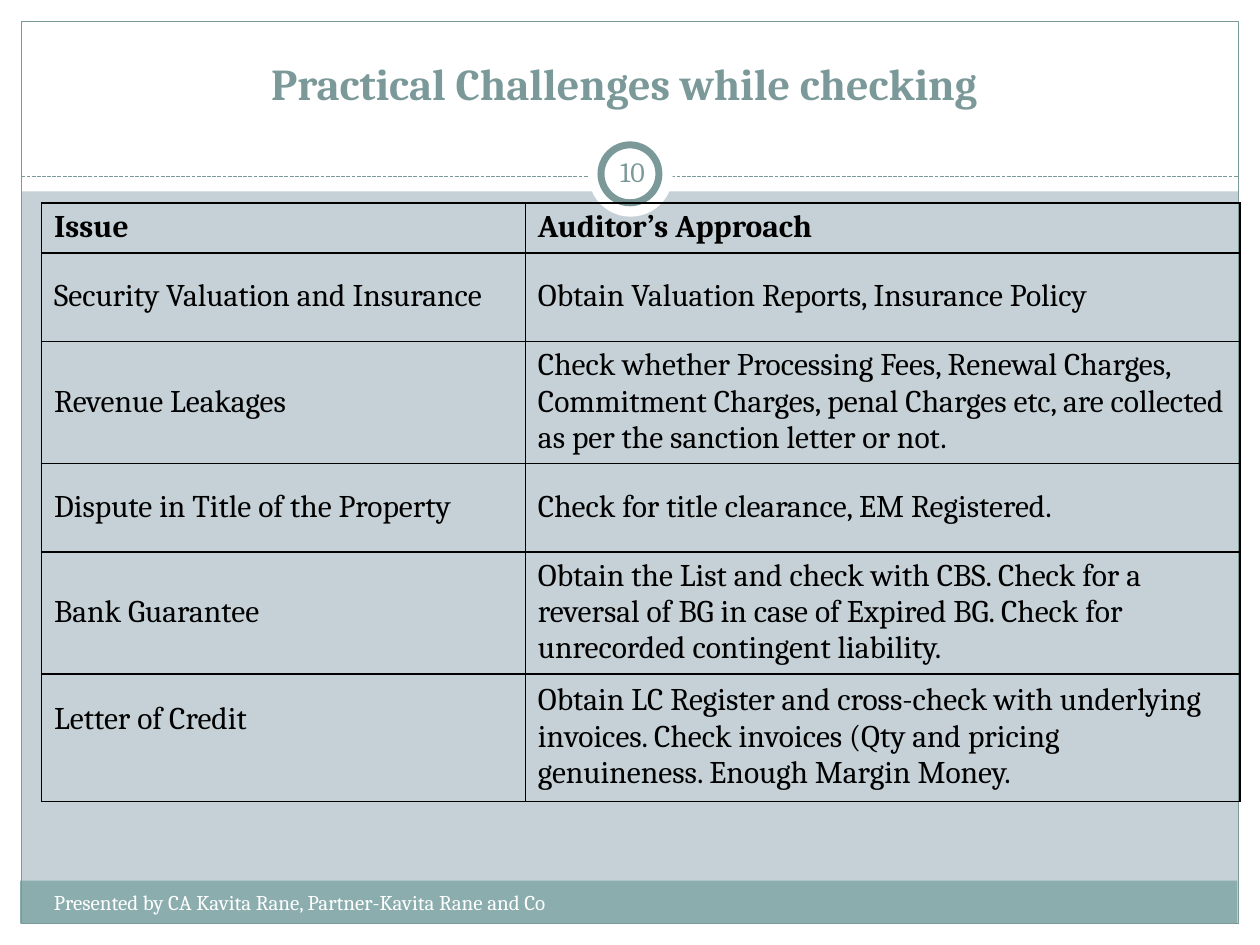
from lxml import etree
from pptx import Presentation
from pptx.dml.color import RGBColor
from pptx.enum.dml import MSO_LINE
from pptx.enum.shapes import MSO_CONNECTOR, MSO_SHAPE
from pptx.enum.text import MSO_ANCHOR, MSO_AUTO_SIZE, PP_ALIGN
from pptx.oxml.ns import qn
from pptx.util import Inches, Pt

RECT, OVAL = MSO_SHAPE.RECTANGLE, MSO_SHAPE.OVAL
STRAIGHT, DASH = MSO_CONNECTOR.STRAIGHT, MSO_LINE.SQUARE_DOT
TOP, MIDDLE, BOTTOM = MSO_ANCHOR.TOP, MSO_ANCHOR.MIDDLE, MSO_ANCHOR.BOTTOM
LEFT, CENTER = PP_ALIGN.LEFT, PP_ALIGN.CENTER
NO_AUTOFIT = MSO_AUTO_SIZE.NONE

FONT = "Cambria"
WHITE, BLACK = "FFFFFF", "000000"
TEAL, BAND, BACKGROUND = "7C999A", "8CADAE", "C5D1D7"

COLUMN_WIDTHS = [3.84, 5.67]
ROW_HEIGHTS = [0.4, 0.7, 0.7, 0.7, 0.7, 1.01]
ROWS = [
    ("Issue", "Auditor’s Approach"),
    ("Security Valuation and Insurance",
     "Obtain Valuation Reports, Insurance Policy"),
    ("Revenue Leakages",
     "Check whether Processing Fees, Renewal Charges, Commitment Charges, "
     "penal Charges etc, are collected as per the sanction letter or not."),
    ("Dispute in Title of the Property",
     "Check for title clearance, EM Registered."),
    ("Bank Guarantee",
     "Obtain the List and check with CBS. Check for a reversal of BG in case "
     "of Expired BG. Check for unrecorded contingent liability."),
    ("Letter of Credit",
     "Obtain LC Register and cross-check with underlying invoices. Check "
     "invoices (Qty and pricing genuineness. Enough Margin Money."),
]


def rgb(color):
    return RGBColor.from_string(color)


def write(tf, text, size, color, bold=False, align=LEFT):
    tf.text = text
    p = tf.paragraphs[0]
    p.alignment = align
    font = p.runs[0].font
    font.name, font.size, font.bold = FONT, Pt(size), bold
    font.color.rgb = rgb(color)


def add_block(slide, kind, box, fill=None, line=None, weight=0.75):
    sp = slide.shapes.add_shape(kind, *map(Inches, box))
    sp.shadow.inherit = False
    if fill:
        sp.fill.solid()
        sp.fill.fore_color.rgb = rgb(fill)
    else:
        sp.fill.background()
    if line:
        sp.line.color.rgb = rgb(line)
        sp.line.width = Pt(weight)
    else:
        sp.line.fill.background()


def add_dashed_line(slide, x1, y1, x2, y2):
    line = slide.shapes.add_connector(STRAIGHT, *map(Inches, (x1, y1, x2, y2)))
    line.line.color.rgb = rgb(TEAL)
    line.line.width = Pt(0.75)
    line.line.dash_style = DASH
    etree.SubElement(line._element.spPr, qn("a:effectLst"))


def add_text(slide, box, text, size, color, align=LEFT, anchor=TOP, inset=None):
    tf = slide.shapes.add_textbox(*map(Inches, box)).text_frame
    tf.word_wrap = True
    tf.vertical_anchor = anchor
    if inset is not None:
        tf.margin_left = tf.margin_right = Inches(inset)
        tf.margin_top = tf.margin_bottom = Inches(inset)
    write(tf, text, size, color, align=align)


def set_title(slide, text):
    title = slide.shapes.title
    title.left, title.top = Inches(0.33), Inches(0.5)
    title.width, title.height = Inches(9.33), Inches(0.83)
    tf = title.text_frame
    tf.word_wrap = True
    tf.auto_size = NO_AUTOFIT
    tf.vertical_anchor = BOTTOM
    tf.margin_right = Inches(0.18)
    tf.margin_bottom = Inches(0.46)
    write(tf, text, 25.2, TEAL, bold=True, align=CENTER)


def set_borders(cell):
    tcPr = cell._tc.get_or_add_tcPr()
    for side in ("L", "R", "T", "B"):
        ln = etree.SubElement(tcPr, qn(f"a:ln{side}"), w=str(Pt(1)))
        fill = etree.SubElement(ln, qn("a:solidFill"))
        etree.SubElement(fill, qn("a:srgbClr"), val=BLACK)


def add_issue_table(slide):
    frame = slide.shapes.add_table(
        len(ROWS), len(COLUMN_WIDTHS), Inches(0.33), Inches(1.61),
        Inches(sum(COLUMN_WIDTHS)), Inches(sum(ROW_HEIGHTS)))
    table = frame.table
    table.first_row = table.horz_banding = False
    for column, width in zip(table.columns, COLUMN_WIDTHS):
        column.width = Inches(width)
    for i, (row, height) in enumerate(zip(table.rows, ROW_HEIGHTS)):
        row.height = Inches(height)
        for cell, text in zip(row.cells, ROWS[i]):
            set_borders(cell)
            cell.fill.background()
            cell.vertical_anchor = MIDDLE
            cell.margin_top, cell.margin_bottom = Inches(0.03), Inches(0.04)
            write(cell.text_frame, text, 18, BLACK, bold=i == 0)
    table.cell(len(ROWS) - 1, 0).margin_bottom = Inches(0.32)


def add_frame(slide):
    for box in [(0, 7.33, 10, 0.17), (0, 0, 10, 1.52),
                (0, 0, 0.17, 7.5), (9.83, 0, 0.17, 7.5)]:
        add_block(slide, RECT, box, WHITE)
    add_block(slide, RECT, (0.16, 6.99, 9.66, 0.34), BAND)
    add_block(slide, RECT, (0.17, 0.17, 9.66, 7.16), line=TEAL)
    add_dashed_line(slide, 0.17, 1.4, 9.83, 1.4)
    add_block(slide, OVAL, (4.67, 1.05, 0.67, 0.67), WHITE)
    add_block(slide, OVAL, (4.77, 1.15, 0.46, 0.46), WHITE, TEAL, 4)


def main():
    prs = Presentation()
    prs.slide_width, prs.slide_height = Inches(10), Inches(7.5)
    slide = prs.slides.add_slide(prs.slide_layouts[5])
    slide.background.fill.solid()
    slide.background.fill.fore_color.rgb = rgb(BACKGROUND)
    add_frame(slide)
    title = slide.shapes.title._element
    title.getparent().append(title)
    set_title(slide, "Practical Challenges while checking")
    add_text(slide, (0.33, 7.01, 5.25, 0.4),
             "Presented by CA Kavita Rane, Partner-Kavita Rane and Co", 12, WHITE)
    add_text(slide, (4.77, 1.12, 0.5, 0.48), "10", 16, TEAL,
             CENTER, MIDDLE, 0.05)
    add_issue_table(slide)
    prs.save("out.pptx")


if __name__ == "__main__":
    main()
